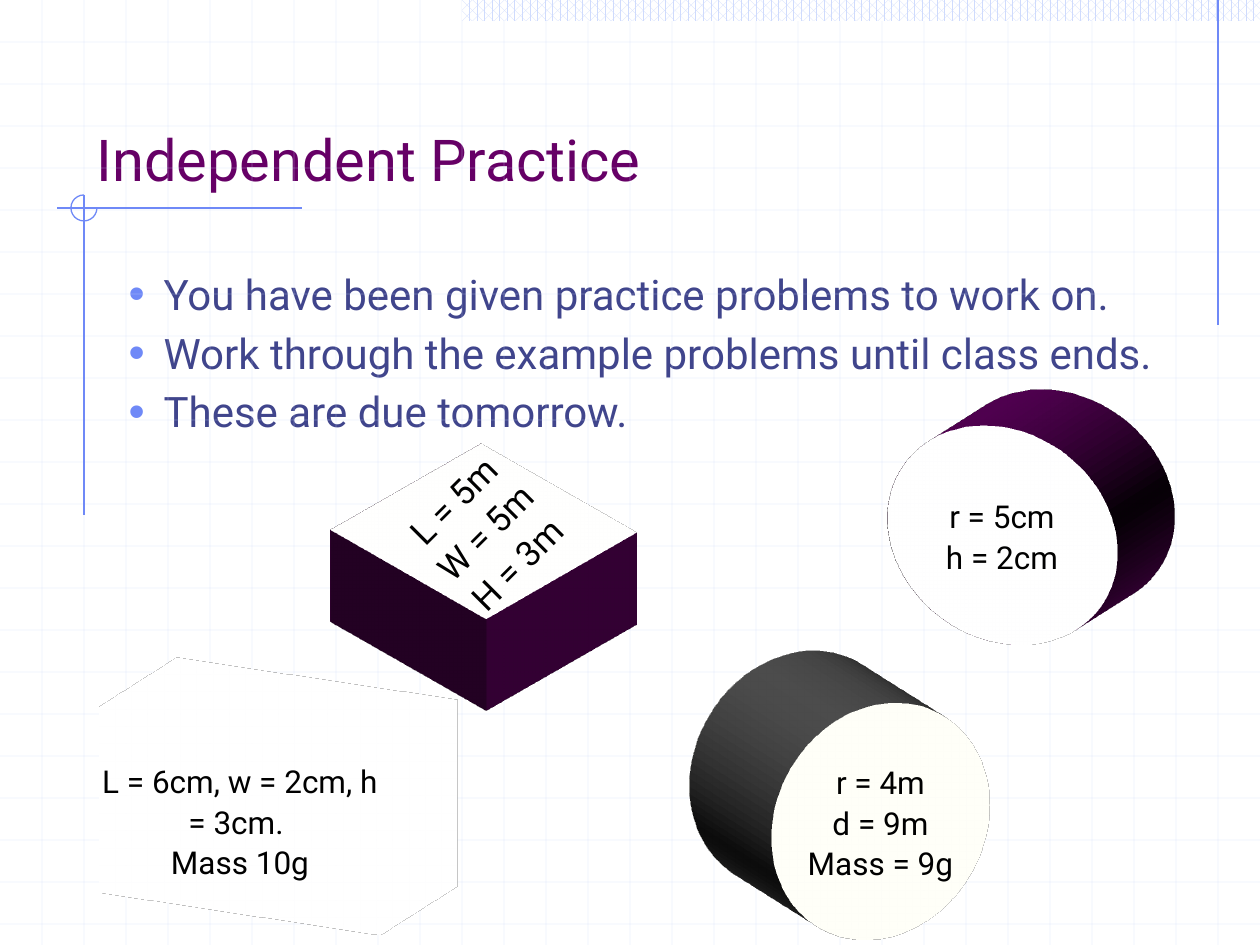
"""Build the Independent Practice slide with its labelled solids."""
import math

from lxml import etree
from pptx import Presentation
from pptx import util as u
from pptx.dml.color import RGBColor
from pptx.enum import dml, shapes, text
from pptx.oxml.ns import qn

SCALE = 914400 / 126
FONT = "Roboto"
COLORS = {
    "title": "660066", "body": "40458C", "accent": "6F89F7", "band": "CFDBFD",
    "white": "FFFFFF", "ink": "000000", "face": "FBF7E6", "edge": "AFA060",
    "purple": "660066", "gray": "606060",
}


def emu(px):
    return u.Emu(round(px * SCALE))


def rgb(name):
    return RGBColor.from_string(COLORS[name])


def write(shape, lines, size, color, align, spacing=1.0):
    """Fill a shape with formatted paragraphs."""
    frame = shape.text_frame
    frame.word_wrap = True
    frame.auto_size = text.MSO_AUTO_SIZE.NONE
    frame.text = "\n".join(lines)
    for paragraph in frame.paragraphs:
        paragraph.alignment = align
        paragraph.line_spacing = spacing
        for run in paragraph.runs:
            run.font.name = FONT
            run.font.size = u.Pt(size)
            run.font.color.rgb = rgb(color)
    return frame


def place(shape, left, top, width, height):
    shape.left, shape.top = emu(left), emu(top)
    shape.width, shape.height = emu(width), emu(height)


def add_bullet(paragraph):
    """Give a paragraph a hanging accent bullet."""
    properties = paragraph._p.get_or_add_pPr()
    properties.set("marL", str(emu(35)))
    properties.set("indent", str(emu(-35)))
    color = etree.SubElement(properties, qn("a:buClr"))
    etree.SubElement(color, qn("a:srgbClr"), val=COLORS["accent"])
    etree.SubElement(properties, qn("a:buSzPct"), val="110000")
    etree.SubElement(properties, qn("a:buFont"), typeface="Arial")
    etree.SubElement(properties, qn("a:buChar"), char="•")


def add_line(slide, x1, y1, x2, y2, color="accent", opacity=100):
    """Draw a thin straight line, optionally faint."""
    line = slide.shapes.add_connector(
        shapes.MSO_CONNECTOR.STRAIGHT, emu(x1), emu(y1), emu(x2), emu(y2))
    line.line.color.rgb = rgb(color)
    line.line.width = u.Pt(0.75)
    if opacity < 100:
        value = line._element.spPr.find(".//" + qn("a:srgbClr"))
        etree.SubElement(value, qn("a:alpha"), val=str(opacity * 1000))
    etree.SubElement(line._element.spPr, qn("a:effectLst"))


def extrude(shape, camera, rig, depth, color):
    """Turn a flat shape into a solid seen by a preset camera."""
    properties = shape._element.spPr
    scene = etree.SubElement(properties, qn("a:scene3d"))
    etree.SubElement(scene, qn("a:camera"), prst=camera)
    etree.SubElement(scene, qn("a:lightRig"), rig=rig, dir="t")
    solid = etree.SubElement(properties, qn("a:sp3d"), extrusionH=str(emu(depth)))
    side = etree.SubElement(solid, qn("a:extrusionClr"))
    etree.SubElement(side, qn("a:srgbClr"), val=COLORS[color])


def add_solid(slide, kind, box, lines, camera, depth, color,
              size=18, rig="threePt"):
    """Draw a labelled solid from its front face."""
    shape = slide.shapes.add_shape(kind, *map(emu, box))
    shape.shadow.inherit = False
    shape.fill.solid()
    shape.fill.fore_color.rgb = rgb("face")
    shape.line.color.rgb = rgb("edge")
    shape.line.width = u.Pt(2)
    frame = write(shape, lines, size, "ink", text.PP_ALIGN.CENTER, 1.07)
    frame.vertical_anchor = text.MSO_ANCHOR.MIDDLE
    extrude(shape, camera, rig, depth, color)
    return frame


def add_grid(slide):
    """Draw the faint background grid."""
    for y in range(42, 945, 42):
        add_line(slide, 0, y, 1260, y, "band", 20)
    for x in range(42, 1260, 42):
        add_line(slide, x, 0, x, 945, "band", 20)


def add_corner_arc(slide):
    """Draw three quarters of a circle where the rules cross."""
    angles = [math.radians(-90 - 15 * step) for step in range(19)]
    points = [(emu(84 + 13 * math.cos(angle)), emu(208 + 13 * math.sin(angle)))
              for angle in angles]
    builder = slide.shapes.build_freeform(*points[0], scale=1.0)
    builder.add_line_segments(points[1:], close=False)
    arc = builder.convert_to_shape()
    arc.shadow.inherit = False
    arc.fill.background()
    arc.line.color.rgb = rgb("accent")
    arc.line.width = u.Pt(0.75)


def add_decoration(slide):
    """Draw the patterned band, rules and corner arc."""
    band = slide.shapes.add_shape(
        shapes.MSO_SHAPE.RECTANGLE, emu(462), 0, emu(798), emu(21))
    band.shadow.inherit = False
    band.fill.patterned()
    band.fill.pattern = dml.MSO_PATTERN.PERCENT_60
    band.fill.fore_color.rgb = rgb("band")
    band.fill.back_color.rgb = rgb("white")
    band.line.fill.background()
    add_line(slide, 1218, 0, 1218, 325)
    add_line(slide, 302, 208, 57, 208)
    add_line(slide, 84, 195, 84, 515)
    add_corner_arc(slide)


def fill_placeholders(slide):
    """Write the title and the bulleted list."""
    title, body = slide.shapes.title, slide.placeholders[1]
    place(title, 84, 42, 1071, 157)
    frame = write(title, ["Independent Practice"], 33, "title", text.PP_ALIGN.LEFT)
    frame.vertical_anchor = text.MSO_ANCHOR.BOTTOM
    place(body, 116, 262, 1071, 567)
    frame = write(body, [
        "You have been given practice problems to work on.",
        "Work through the example problems until class ends.",
        "These are due tomorrow.",
    ], 24, "body", text.PP_ALIGN.LEFT)
    for index, paragraph in enumerate(frame.paragraphs):
        add_bullet(paragraph)
        paragraph.space_before = u.Pt(4.8 if index else 0)


def main():
    presentation = Presentation()
    presentation.slide_width, presentation.slide_height = emu(1260), emu(945)
    slide = presentation.slides.add_slide(presentation.slide_layouts[1])
    add_grid(slide)
    add_decoration(slide)
    fill_placeholders(slide)
    rectangle, oval = shapes.MSO_SHAPE.RECTANGLE, shapes.MSO_SHAPE.OVAL
    frame = add_solid(slide, rectangle, (377, 421, 213, 220),
                      ["L = 5m", "W = 5m", "H = 3m"],
                      "isometricTopUp", 112, "purple", size=20)
    frame.paragraphs[-1].space_after = u.Pt(8)
    add_solid(slide, oval, (874, 421, 256, 228), ["r = 5cm", "h = 2cm"],
              "isometricOffAxis2Left", 130, "purple")
    add_solid(slide, rectangle, (84, 723, 312, 195),
              ["L = 6cm, w = 2cm, h = 3cm. ", "Mass 10g"],
              "isometricOffAxis2Left", 176, "white", rig="flat")
    add_solid(slide, oval, (759, 698, 243, 247),
              ["r = 4m", "d = 9m", "Mass = 9g"],
              "isometricOffAxis1Right", 187, "gray")
    presentation.save("out.pptx")


if __name__ == "__main__":
    main()
